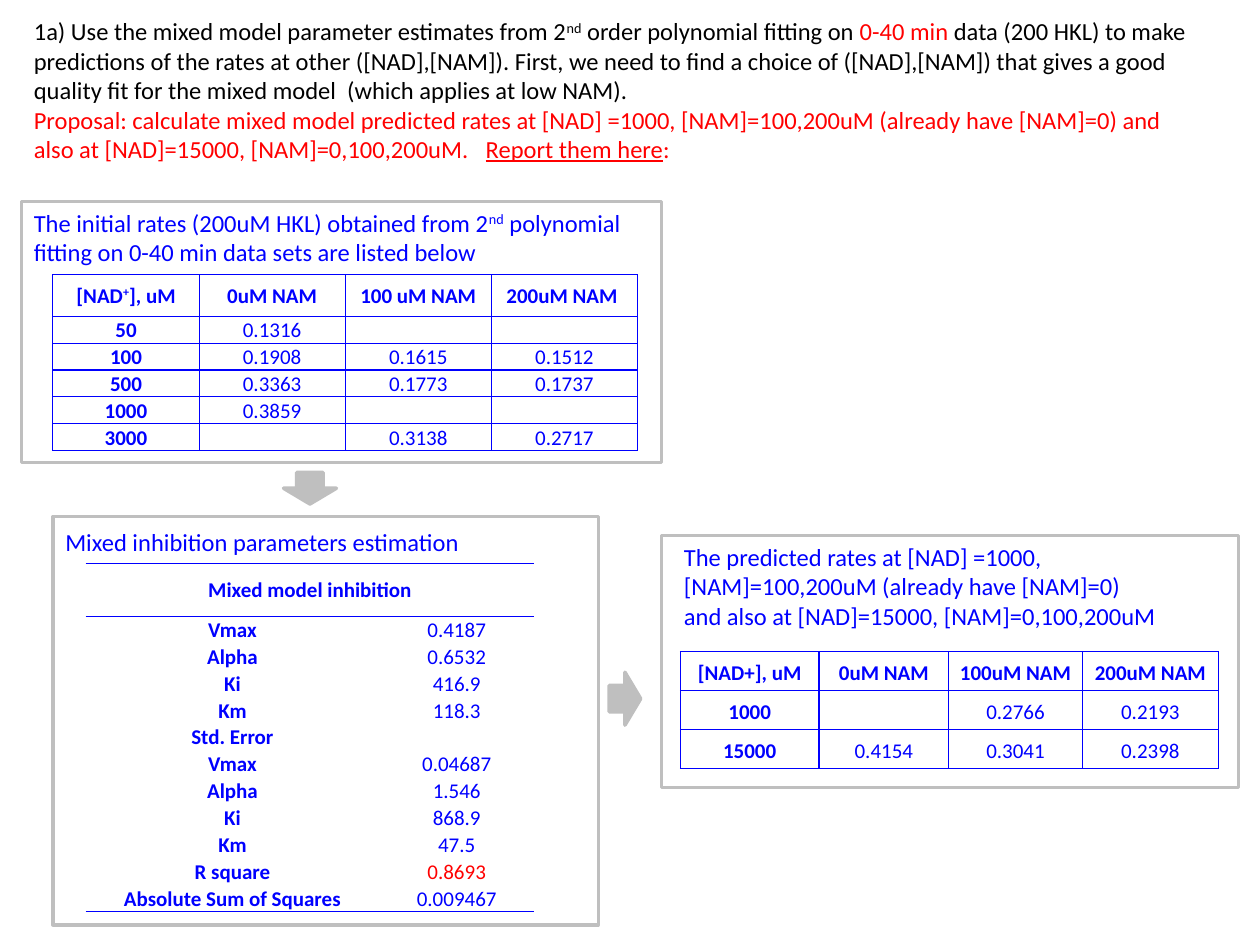
from lxml.etree import SubElement
from pptx import Presentation
from pptx.dml.color import RGBColor
from pptx.enum.shapes import MSO_SHAPE as SHAPE
from pptx.enum.text import MSO_ANCHOR as ANCHOR, MSO_AUTO_SIZE as AUTO, PP_ALIGN as ALIGN
from pptx.oxml.ns import qn
from pptx.util import Inches, Pt

BLUE, RED, BLACK, GRAY = "0000FF", "FF0000", "000000", "BFBFBF"


def rgb(color):
    return RGBColor.from_string(color)


class Page:
    font = "Calibri"
    body, small = 14, 12

    def __init__(self, prs):
        self.s = prs.slides.add_slide(prs.slide_layouts[6])

    def style(self, p, size, color, bold=False):
        p.font.name, p.font.size, p.font.bold = self.font, Pt(size), bold
        p.font.color.rgb = rgb(color)

    def runs(self, p, parts):
        for text, look in parts:
            r = p.add_run()
            r.text = text
            if "color" in look:
                r.font.color.rgb = rgb(look["color"])
            if "underline" in look:
                r.font.underline = True
            if "sup" in look:
                r.font._element.set("baseline", "30000")

    def text(self, box, paragraphs, wrap=True):
        tf = self.s.shapes.add_textbox(*map(Inches, box)).text_frame
        tf.word_wrap = wrap
        tf.auto_size = AUTO.SHAPE_TO_FIT_TEXT
        for i, (color, parts) in enumerate(paragraphs):
            p = tf.add_paragraph() if i else tf.paragraphs[0]
            self.style(p, self.body, color)
            self.runs(p, parts)

    def shape(self, kind, box, fill=None, rotation=0):
        sp = self.s.shapes.add_shape(kind, *map(Inches, box))
        sp.shadow.inherit = False
        sp.rotation = rotation
        if fill:
            sp.fill.solid()
            sp.fill.fore_color.rgb = rgb(fill)
        else:
            sp.fill.background()
        sp.line.color.rgb = rgb(GRAY)
        sp.line.width = Pt(2)

    def borders(self, cell, sides):
        tc_pr = cell._tc.get_or_add_tcPr()
        for side in "LRTB":
            ln = SubElement(tc_pr, qn("a:ln" + side), w=str(Pt(0.75)))
            if side in sides:
                fill = SubElement(ln, qn("a:solidFill"))
                SubElement(fill, qn("a:srgbClr"), val=BLUE)
            else:
                SubElement(ln, qn("a:noFill"))

    def table(self, left, top, widths, heights, rows, insets, sides, spacing=None):
        table = self.s.shapes.add_table(
            len(rows), len(widths), Inches(left), Inches(top),
            Inches(sum(widths)), Inches(sum(heights))).table
        table.first_row = table.horz_banding = False
        for column, width in zip(table.columns, widths):
            column.width = Inches(width)
        for i, (row, height) in enumerate(zip(rows, heights)):
            table.rows[i].height = Inches(height)
            for j, value in enumerate(row):
                cell = table.cell(i, j)
                self.borders(cell, sides(i))
                cell.fill.background()
                cell.vertical_anchor = ANCHOR.MIDDLE
                (cell.margin_left, cell.margin_top,
                 cell.margin_right, cell.margin_bottom) = map(Inches, insets)
                p = cell.text_frame.paragraphs[0]
                p.alignment = ALIGN.CENTER
                if spacing:
                    p.line_spacing = spacing
                self.style(p, self.small, BLUE, i == 0 or j == 0)
                if value:
                    self.runs(p, [(value, {})] if isinstance(value, str) else value)
                else:
                    SubElement(p._p, qn("a:endParaRPr"), sz=str(self.small * 100))
        return table


def main():
    prs = Presentation()
    prs.slide_width, prs.slide_height = Inches(10), Inches(7.5)
    page = Page(prs)
    tight, loose = (0.01, 0.01, 0.01, 0), (0.07, 0, 0.07, 0)
    sup = {"sup": True}

    page.shape(SHAPE.RECTANGLE, (0.17, 1.6, 5.08, 2.07))
    initial_rates = [
        ([("[NAD", {}), ("+", sup), ("], uM", {})], "0uM NAM", "100 uM NAM", "200uM NAM "),
        ("50", "0.1316", "", ""),
        ("100", "0.1908", "0.1615", "0.1512"),
        ("500", "0.3363", "0.1773", "0.1737"),
        ("1000", "0.3859", "", ""),
        ("3000", "", "0.3138", "0.2717"),
    ]
    page.table(0.42, 2.18, [1.16] * 4, [0.33] + [0.21] * 5, initial_rates,
               tight, lambda i: "LRTB")

    parameters = [
        ("Mixed model inhibition", ""),
        ("Vmax", "0.4187"), ("Alpha", "0.6532"), ("Ki", "416.9"), ("Km", "118.3"),
        ("Std. Error", ""),
        ("Vmax", "0.04687"), ("Alpha", "1.546"), ("Ki", "868.9"), ("Km", "47.5"),
        ("R square", [("0.8693", {"color": RED})]),
        ("Absolute Sum of Squares", "0.009467"),
    ]
    rules = {0: "TB", 1: "T", len(parameters) - 1: "B"}
    table = page.table(0.68, 4.47, [2.33, 1.23], [0.42] + [0.21] * 11, parameters,
                       tight, lambda i: rules.get(i, ""))
    table.cell(0, 0).merge(table.cell(0, 1))

    page.text((0.17, 0.08, 9.42, 1.28), [
        (BLACK, [
            ("1a) Use the mixed model parameter estimates from 2", {}),
            ("nd", sup),
            (" order polynomial fitting on ", {}),
            ("0-40 min ", {"color": RED}),
            ("data (200 HKL) to make predictions of the rates at other ([NAD],[NAM]). "
             "First, we need to find a choice of ([NAD],[NAM]) that gives a good quality "
             "fit for the mixed model  (which applies at low NAM).", {}),
        ]),
        (RED, [
            ("Proposal: calculate mixed model predicted rates at [NAD] =1000, "
             "[NAM]=100,200uM (already have [NAM]=0) and also at [NAD]=15000, "
             "[NAM]=0,100,200uM.   ", {}),
            ("Report them here", {"underline": True}),
            (":", {}),
        ]),
    ])
    page.text((0.17, 1.6, 5, 0.57), [(BLUE, [
        ("The initial rates (200uM HKL) obtained from 2", {}),
        ("nd", sup),
        (" polynomial fitting on 0-40 min data sets are listed below", {}),
    ])])
    page.text((0.42, 4.13, 3.36, 0.34),
              [(BLUE, [("Mixed inhibition parameters estimation", {})])], wrap=False)
    page.text((5.33, 4.25, 4, 0.81), [(BLUE, [
        ("The predicted rates at [NAD] =1000, [NAM]=100,200uM (already have [NAM]=0) "
         "and also at [NAD]=15000, [NAM]=0,100,200uM", {}),
    ])])

    predicted_rates = [
        ("[NAD+], uM", "0uM NAM", "100uM NAM", "200uM NAM"),
        ("1000", "", "0.2766", "0.2193"),
        ("15000", "0.4154", "0.3041", "0.2398"),
    ]
    page.table(5.4, 5.17, [1.1, 1.03, 1.06, 1.08], [0.31] * 3, predicted_rates,
               loose, lambda i: "LRTB", spacing=1.15)

    page.shape(SHAPE.DOWN_ARROW, (2.25, 3.75, 0.42, 0.25), GRAY)
    page.shape(SHAPE.DOWN_ARROW, (4.75, 5.42, 0.42, 0.25), GRAY, rotation=270)
    page.shape(SHAPE.RECTANGLE, (0.42, 4.1, 4.33, 3.24))
    page.shape(SHAPE.RECTANGLE, (5.25, 4.25, 4.58, 2))
    prs.save("out.pptx")


if __name__ == "__main__":
    main()
